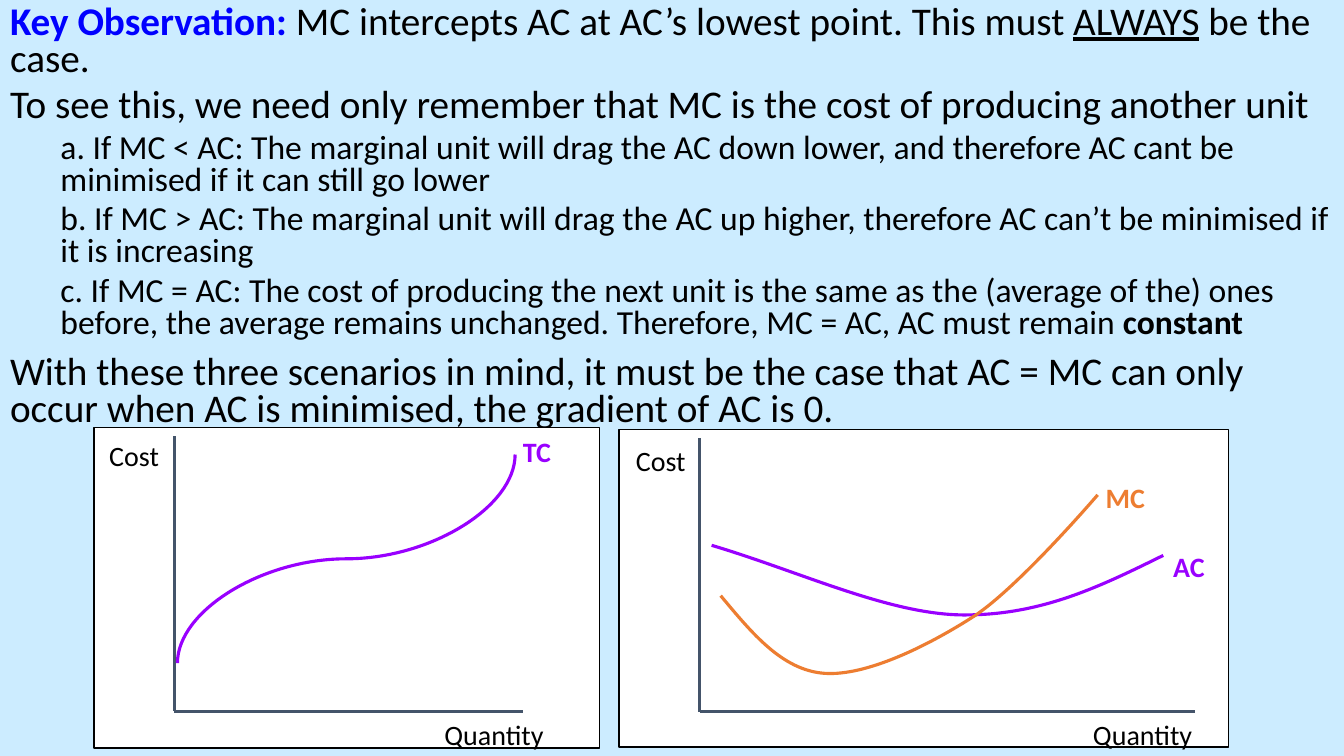
from lxml.etree import SubElement
from pptx import Presentation
from pptx.dml.color import RGBColor
from pptx.enum.shapes import MSO_CONNECTOR, MSO_SHAPE
from pptx.enum.text import MSO_ANCHOR, MSO_AUTO_SIZE, PP_ALIGN
from pptx.oxml.ns import qn
from pptx.util import Pt

HEX = {"sky": "CCECFF", "blue": "0000FF", "black": "000000", "white": "FFFFFF",
       "slate": "44546A", "purple": "9900FF", "orange": "ED7D31"}
RGB = {name: RGBColor.from_string(code) for name, code in HEX.items()}


def style(run, size, color="black", bold=False):
    run.font.name = "Calibri"
    run.font.size = Pt(size)
    run.font.bold = bold
    run.font.color.rgb = RGB[color]


def link(group, kind, ends, color):
    line = group.shapes.add_connector(kind, *map(Pt, ends))
    line.line.color.rgb = RGB[color]
    line.line.width = Pt(2.25)
    SubElement(line._element.spPr, qn("a:effectLst"))
    return line


deck = Presentation()
deck.slide_width, deck.slide_height = Pt(960), Pt(540)
slide = deck.slides.add_slide(deck.slide_layouts[1])
slide.background.fill.solid()
slide.background.fill.fore_color.rgb = RGB["sky"]
title = slide.shapes.title._element
title.getparent().remove(title)

NOTES = [
    (0, 6, ["Key Observation: ", "MC intercepts AC at AC’s lowest point. This must ",
            "ALWAYS", " be the case."]),
    (0, 6, ["To see this, we need only remember that MC is the cost of producing another unit"]),
    (1, 5, ["a. If MC < AC: The marginal unit will drag the AC down lower, and therefore "
            "AC cant be minimised if it can still go lower"]),
    (1, 5, ["b. If MC > AC: The marginal unit will drag the AC up higher, therefore "
            "AC can’t be minimised if it is increasing"]),
    (1, 5, ["c. If MC = AC: The cost of producing the next unit is the same as the (average "
            "of the) ones before, the average remains unchanged. Therefore, MC = AC, "
            "AC must remain ", "constant"]),
    (0, 10, ["With these three scenarios in mind, it must be the case that AC = MC can only "
             "occur when AC is minimised, the gradient of AC is 0."]),
]
body = slide.placeholders[1]
body.left, body.top, body.width, body.height = Pt(0), Pt(0), Pt(960), Pt(311)
frame = body.text_frame
frame.word_wrap = True
frame.auto_size = MSO_AUTO_SIZE.NONE
frame.vertical_anchor = MSO_ANCHOR.TOP
frame.text = "\n".join(parts[0] for level, gap, parts in NOTES)
for para, (level, gap, parts) in zip(frame.paragraphs, NOTES):
    para.level = level
    para.alignment = PP_ALIGN.LEFT
    para.line_spacing = 0.8
    para.space_before = Pt(gap)
    props = para._p.get_or_add_pPr()
    props.set("marL", str(Pt(36 * level)))
    props.set("indent", "0")
    SubElement(props, qn("a:buNone"))
    for part in parts[1:]:
        para.add_run().text = part
    for run in para.runs:
        key = run.text.startswith("Key")
        style(run, 24 if level else 28, "blue" if key else "black",
              key or run.text == "constant")
        if run.text == "ALWAYS":
            run.font.underline = True

PANELS = [
    {"frame": (442.1, 306.7, 435.6, 226.8),
     "axes": (499.7, 313.2, 508.3, 853.9),
     "labels": [("Quantity", 758.2, 509, 115.9, "black"),
                ("Cost", 428.4, 313.2, 87.1, "black"),
                ("AC", 830.9, 388.8, 87.1, "purple"),
                ("MC", 782.6, 339.8, 87.1, "orange")],
     "curves": [("purple", [(830.9, 396.7), (788.4, 417.6), (746.6, 438.5), (692.6, 439.2),
                            (638.6, 440.6), (573.8, 409), (508.3, 389.5)]),
                ("orange", [(514.8, 425.5), (537.1, 452.2), (558.7, 478.8), (589, 481),
                            (619.2, 483.1), (663.8, 460.8), (696.2, 439.9),
                            (728.6, 418.3), (784.1, 353.5), (784.1, 353.5)])]},
    {"frame": (67, 305.3, 361.4, 229),
     "axes": (124.6, 311.8, 508, 373.7),
     "labels": [("Quantity", 304.6, 509, 96.5, "black"),
                ("Cost", 59.8, 309.6, 72, "black"),
                ("TC", 366.5, 306.7, 136.8, "purple")],
     "curves": []},
]
for panel in PANELS:
    group = slide.shapes.add_group_shape()
    card = group.shapes.add_shape(MSO_SHAPE.RECTANGLE, *map(Pt, panel["frame"]))
    card.shadow.inherit = False
    card.fill.solid()
    card.fill.fore_color.rgb = RGB["white"]
    card.line.color.rgb = RGB["black"]
    card.line.width = Pt(1)

    left, top, base, right = panel["axes"]
    for ends in [(left, top, left, base), (left, base, right, base)]:
        link(group, MSO_CONNECTOR.STRAIGHT, ends, "slate")

    for color, dots in panel["curves"]:
        spots = [(Pt(x), Pt(y)) for x, y in dots]
        pen = group.shapes.build_freeform(*spots[0])
        pen.add_line_segments(spots[1:], close=False)
        curve = pen.convert_to_shape()
        curve.shadow.inherit = False
        curve.fill.background()
        curve.line.color.rgb = RGB[color]
        curve.line.width = Pt(2.25)
        steps = list(curve._element.iter(qn("a:lnTo")))
        for start in range(0, len(steps), 3):
            bend = SubElement(steps[start].getparent(), qn("a:cubicBezTo"))
            for step in steps[start:start + 3]:
                bend.append(step[0])
                step.getparent().remove(step)

    for text, x, y, width, color in panel["labels"]:
        box = group.shapes.add_textbox(Pt(x), Pt(y), Pt(width), Pt(24.5))
        box.text_frame.word_wrap = True
        box.text_frame.auto_size = MSO_AUTO_SIZE.SHAPE_TO_FIT_TEXT
        box.text_frame.text = text
        para = box.text_frame.paragraphs[0]
        plain = color == "black"
        para.alignment = PP_ALIGN.CENTER if plain else PP_ALIGN.LEFT
        style(para.runs[0], 20, color, not plain)

total = link(group, MSO_CONNECTOR.CURVE, (321.8, 519.8, 172.8, 278.6), "purple")
total._element.spPr.find(qn("a:xfrm")).set("rot", "5400000")

deck.save("out.pptx")
